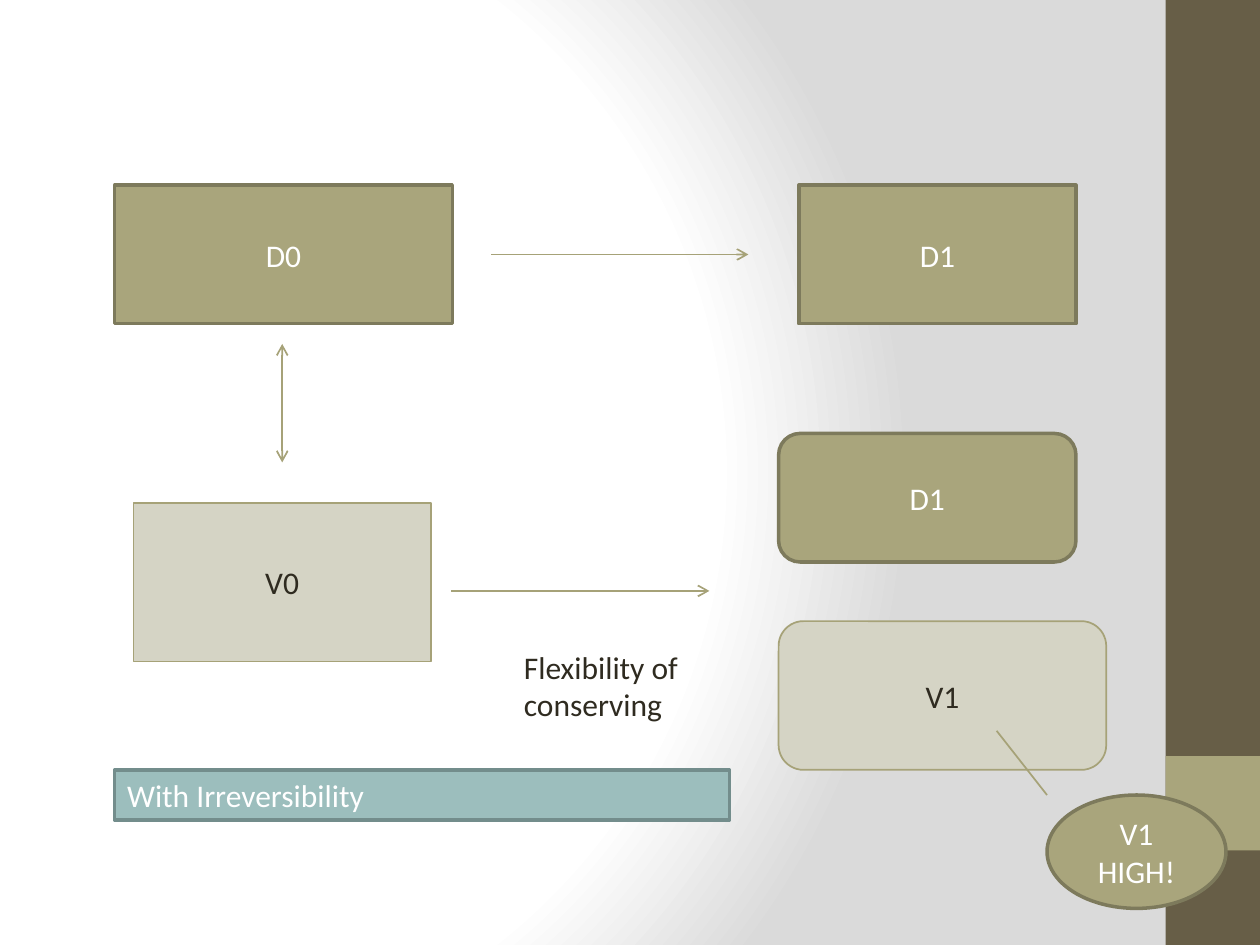
from dataclasses import dataclass

import lxml.etree
import pptx
import pptx.dml.color
import pptx.enum.shapes
import pptx.enum.text
import pptx.oxml.ns
import pptx.util

Inches = pptx.util.Inches
Shape = pptx.enum.shapes.MSO_SHAPE
Align = pptx.enum.text.PP_ALIGN
Anchor = pptx.enum.text.MSO_ANCHOR
qn = pptx.oxml.ns.qn

COLORS = {
    "white": "FFFFFF",
    "gray": "DADADA",
    "brown": "675E47",
    "olive": "A9A57C",
    "olive_edge": "7D7A5C",
    "olive_line": "A6A278",
    "pale": "D5D4C5",
    "ink": "2F2B20",
    "teal": "9CBEBD",
    "teal_edge": "738D8C",
}


@dataclass(frozen=True)
class Style:
    fill: str
    text: str = "white"
    edge: str | None = None
    edge_width: float = 2


BAND = Style("brown")
ACCENT = Style("olive")
DEMAND = Style("olive", "white", "olive_edge")
VALUE = Style("pale", "ink", "olive_line", 1)
CAPTION = Style("teal", "white", "teal_edge")


@dataclass(frozen=True)
class Box:
    text: str
    left: float
    top: float
    width: float
    height: float
    style: Style
    kind: Shape = Shape.RECTANGLE
    align: Align = Align.CENTER
    anchor: Anchor = Anchor.MIDDLE


@dataclass(frozen=True)
class Link:
    start: tuple[float, float]
    end: tuple[float, float]
    heads: tuple[str, ...] = ()


BOXES = [
    Box("", 9.25, 0, 0.75, 7.5, BAND),
    Box("", 9.25, 6, 0.75, 0.75, ACCENT),
    Box("D0", 0.91, 1.47, 2.68, 1.1, DEMAND),
    Box("D1", 6.34, 1.47, 2.2, 1.1, DEMAND),
    Box("V0", 1.06, 3.99, 2.36, 1.26, VALUE),
    Box("D1", 6.18, 3.44, 2.36, 1.02, DEMAND, Shape.ROUNDED_RECTANGLE),
    Box("V1", 6.18, 4.93, 2.6, 1.18, VALUE, Shape.ROUNDED_RECTANGLE),
    Box("With Irreversibility", 0.91, 6.11, 4.88, 0.4, CAPTION,
        align=Align.LEFT, anchor=Anchor.TOP),
    Box("V1 HIGH!", 8.31, 6.31, 1.42, 0.9, DEMAND, Shape.OVAL),
]

LINKS = [
    Link((3.9, 2.02), (5.94, 2.02), ("tailEnd",)),
    Link((2.24, 2.73), (2.24, 3.67), ("headEnd", "tailEnd")),
    Link((3.58, 4.69), (5.63, 4.69), ("tailEnd",)),
    Link((7.91, 5.8), (8.31, 6.31)),
]


def rgb(name: str) -> pptx.dml.color.RGBColor:
    return pptx.dml.color.RGBColor.from_string(COLORS[name])


def paint_background(page) -> None:
    page.background.fill.gradient()
    gradient = next(page.element.iter(qn("a:gradFill")))
    for child in list(gradient):
        gradient.remove(child)
    add = lxml.etree.SubElement
    stops = add(gradient, qn("a:gsLst"))
    for percent, name in ((0, "white"), (75, "white"), (100, "gray")):
        stop = add(stops, qn("a:gs"), pos=str(percent * 1000))
        add(stop, qn("a:srgbClr"), val=COLORS[name])
    circle = add(gradient, qn("a:path"), path="circle")
    add(circle, qn("a:fillToRect"), l="20000", t="50000", r="100000", b="50000")


def write_text(frame, text: str, color: str, align: Align, anchor: Anchor) -> None:
    frame.word_wrap = True
    frame.vertical_anchor = anchor
    para = frame.paragraphs[0]
    para.text = text
    para.alignment = align
    para.font.name = "Calibri"
    para.font.size = pptx.util.Pt(18)
    para.font.color.rgb = rgb(color)


def draw_box(page, box: Box) -> None:
    shape = page.shapes.add_shape(
        box.kind, Inches(box.left), Inches(box.top), Inches(box.width), Inches(box.height)
    )
    shape.shadow.inherit = False
    shape.fill.solid()
    shape.fill.fore_color.rgb = rgb(box.style.fill)
    if box.style.edge:
        shape.line.color.rgb = rgb(box.style.edge)
        shape.line.width = pptx.util.Pt(box.style.edge_width)
    else:
        shape.line.fill.background()
    if box.text:
        write_text(shape.text_frame, box.text, box.style.text, box.align, box.anchor)


def draw_link(page, link: Link) -> None:
    ends = [Inches(value) for value in link.start + link.end]
    connector = page.shapes.add_connector(pptx.enum.shapes.MSO_CONNECTOR.STRAIGHT, *ends)
    connector.line.color.rgb = rgb("olive_line")
    connector.line.width = pptx.util.Pt(1)
    outline = connector.line._get_or_add_ln()
    for head in link.heads:
        lxml.etree.SubElement(outline, qn(f"a:{head}"), type="arrow")
    lxml.etree.SubElement(connector.element.spPr, qn("a:effectLst"))


def main() -> None:
    deck = pptx.Presentation()
    deck.slide_width = Inches(10)
    deck.slide_height = Inches(7.5)
    page = deck.slides.add_slide(deck.slide_layouts[6])
    paint_background(page)
    for box in BOXES:
        draw_box(page, box)
    for link in LINKS:
        draw_link(page, link)
    label = page.shapes.add_textbox(Inches(4.06), Inches(5.09), Inches(1.57), Inches(0.71))
    write_text(label.text_frame, "Flexibility of conserving", "ink", Align.LEFT, Anchor.TOP)
    deck.save("out.pptx")


if __name__ == "__main__":
    main()
